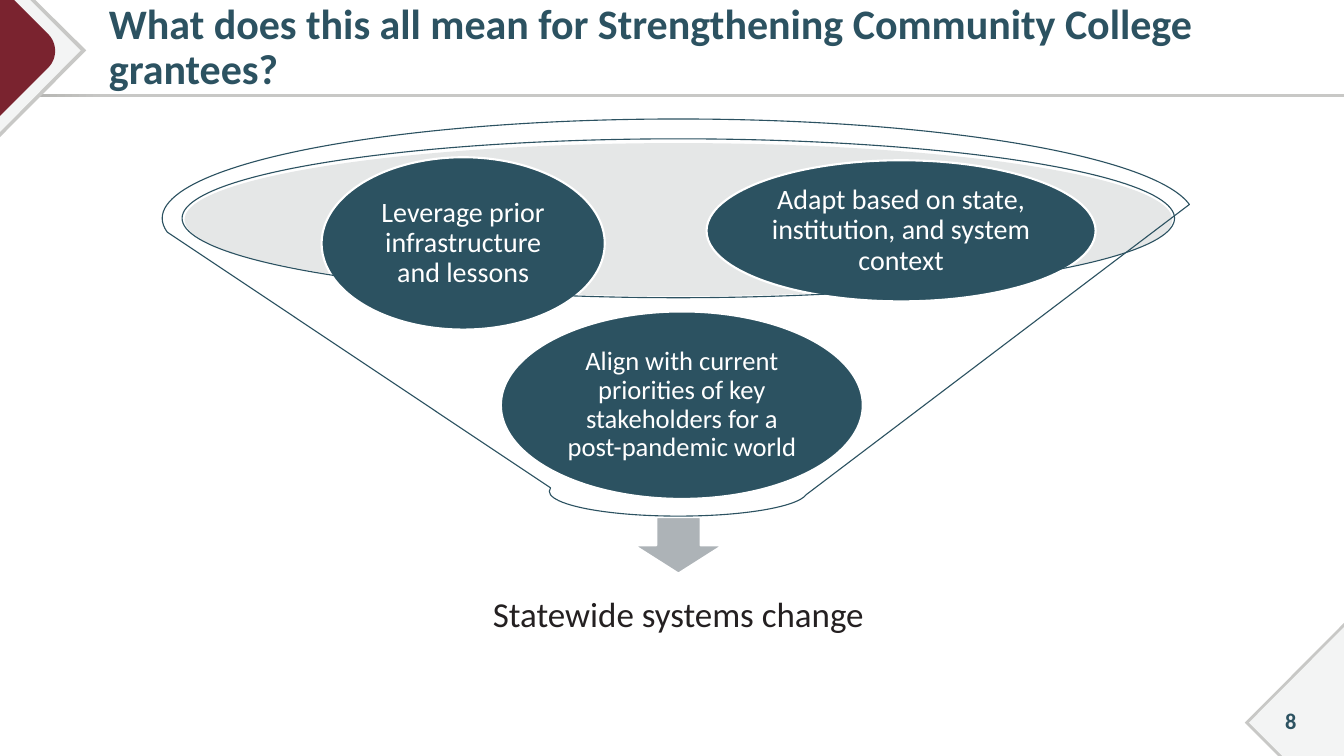
import pptx
import pptx.util
import pptx.dml.color
import pptx.enum.shapes
import pptx.enum.text
import pptx.oxml.ns
import lxml.etree

Pt = pptx.util.Pt
SHAPE = pptx.enum.shapes.MSO_SHAPE
ALIGN = pptx.enum.text.PP_ALIGN
FONT = "Calibri"
COLORS = {
    "teal": "2C5261", "white": "FFFFFF", "ink": "242021", "maroon": "7A232F",
    "edge": "C8C8C6", "edge_dark": "ABABA8", "panel": "F3F4F4",
    "mouth": "BEC3C5", "arrow": "ADB3B7",
}


def rgb(name):
    return pptx.dml.color.RGBColor.from_string(COLORS[name])


def style(sp, fill=None, line=None, width=1.5):
    sp.shadow.inherit = False
    if fill:
        sp.fill.solid()
        sp.fill.fore_color.rgb = rgb(fill)
    else:
        sp.fill.background()
    if line:
        sp.line.color.rgb = rgb(line)
        sp.line.width = Pt(width)
    else:
        sp.line.fill.background()


def set_text(sp, text, size, color, bold=False, align=ALIGN.CENTER,
             spacing=0.9, insets=(2, 2, 2, 2)):
    tf = sp.text_frame
    tf.word_wrap = True
    tf.vertical_anchor = pptx.enum.text.MSO_ANCHOR.MIDDLE
    tf.margin_left, tf.margin_top, tf.margin_right, tf.margin_bottom = map(Pt, insets)
    tf.text = text
    p = tf.paragraphs[0]
    p.alignment = align
    p.line_spacing = spacing
    font = p.runs[0].font
    font.name, font.size, font.bold = FONT, Pt(size), bold
    font.color.rgb = rgb(color)


def add_preset(s, kind, box, fill=None, line=None, width=1.5):
    sp = s.shapes.add_shape(kind, *map(Pt, box))
    style(sp, fill, line, width)
    return sp


def add_label(s, box, text, size, color, **options):
    set_text(s.shapes.add_textbox(*map(Pt, box)), text, size, color, **options)


def add_polygon(s, points, fill):
    # 100 units per point keeps the fractions of each vertex
    scaled = [(round(x * 100), round(y * 100)) for x, y in points]
    builder = s.shapes.build_freeform(*scaled[0], scale=Pt(1) / 100)
    builder.add_line_segments(scaled[1:], close=True)
    style(builder.convert_to_shape(), fill)


def bezier(a, b, c, d, steps=16):
    points = []
    for i in range(steps + 1):
        t = i / steps
        u = 1 - t
        points.append(tuple(
            u**3 * a[k] + 3 * u * u * t * b[k] + 3 * u * t * t * c[k] + t**3 * d[k]
            for k in (0, 1)))
    return points


def add_header_rule(s):
    sp = add_preset(s, SHAPE.RECTANGLE, (0, 67, 960, 2.2), "edge")
    sp.fill.gradient()
    sp.fill.gradient_angle = 0
    for stop, position, name in zip(sp.fill.gradient_stops, (0, 0.08), ("edge_dark", "edge")):
        stop.position = position
        stop.color.rgb = rgb(name)


def add_corners(s):
    # Top left
    add_polygon(s, [(0, 0), (25.2, 0), (61.6, 36), (0, 97.9)], "edge")
    add_polygon(s, [(0, 0), (21.6, 0), (57.6, 36), (0, 94.3)], "panel")
    curve = bezier((34.6, 24.5), (41, 31), (41, 41.8), (34.6, 48.2))
    add_polygon(s, [(0, 0), (10.1, 0)] + curve + [(0, 82.8)], "maroon")
    # Bottom right
    add_polygon(s, [(960, 445), (960, 540), (913, 540), (889.2, 516.2)], "edge")
    add_polygon(s, [(960, 448), (960, 540), (916, 540), (892.1, 516.2)], "panel")


def add_funnel(s):
    mouth = add_preset(s, SHAPE.OVAL, (131.8, 102.2, 705.6, 109.4), "mouth")
    color = mouth.fill._xPr.find(".//" + pptx.oxml.ns.qn("a:srgbClr"))
    lxml.etree.SubElement(color, pptx.oxml.ns.qn("a:alpha"), val="40000")

    add_preset(s, SHAPE.DOWN_ARROW, (452.9, 369.4, 63.4, 40.3), "arrow", "white")
    add_label(s, (332.6, 401.8, 303.8, 76.3), "Statewide systems change", 25, "ink",
              insets=(13.7, 13.7, 13.7, 13.7))

    ideas = [
        ((357.8, 222.5, 258.5, 133.9), 19,
         "Align with current priorities of key stakeholders for a post-pandemic world"),
        ((229.7, 112.3, 202.3, 123.1), 20, "Leverage prior infrastructure and lessons"),
        ((504.7, 114.5, 277.9, 100.8), 20,
         "Adapt based on state, institution, and system context"),
    ]
    for box, size, text in ideas:
        set_text(add_preset(s, SHAPE.OVAL, box, "teal", "white"), text, size, "white")

    add_preset(s, SHAPE.FUNNEL, (115.9, 85, 737.3, 283.7), line="teal", width=0.79)


def main():
    prs = pptx.Presentation()
    prs.slide_width, prs.slide_height = Pt(960), Pt(540)
    s = prs.slides.add_slide(prs.slide_layouts[6])

    # Frame
    add_header_rule(s)
    add_corners(s)

    # Slide number and title
    add_label(s, (896.4, 500.4, 51.1, 28.8), "8", 16, "teal", bold=True, spacing=1.0)
    add_label(s, (63.4, 3.6, 872.6, 61.9),
              "What does this all mean for Strengthening Community College grantees?",
              30, "teal", bold=True, align=ALIGN.LEFT, insets=(14.4, 3.6, 7.2, 3.6))

    # Diagram
    add_funnel(s)
    prs.save("out.pptx")


if __name__ == "__main__":
    main()
